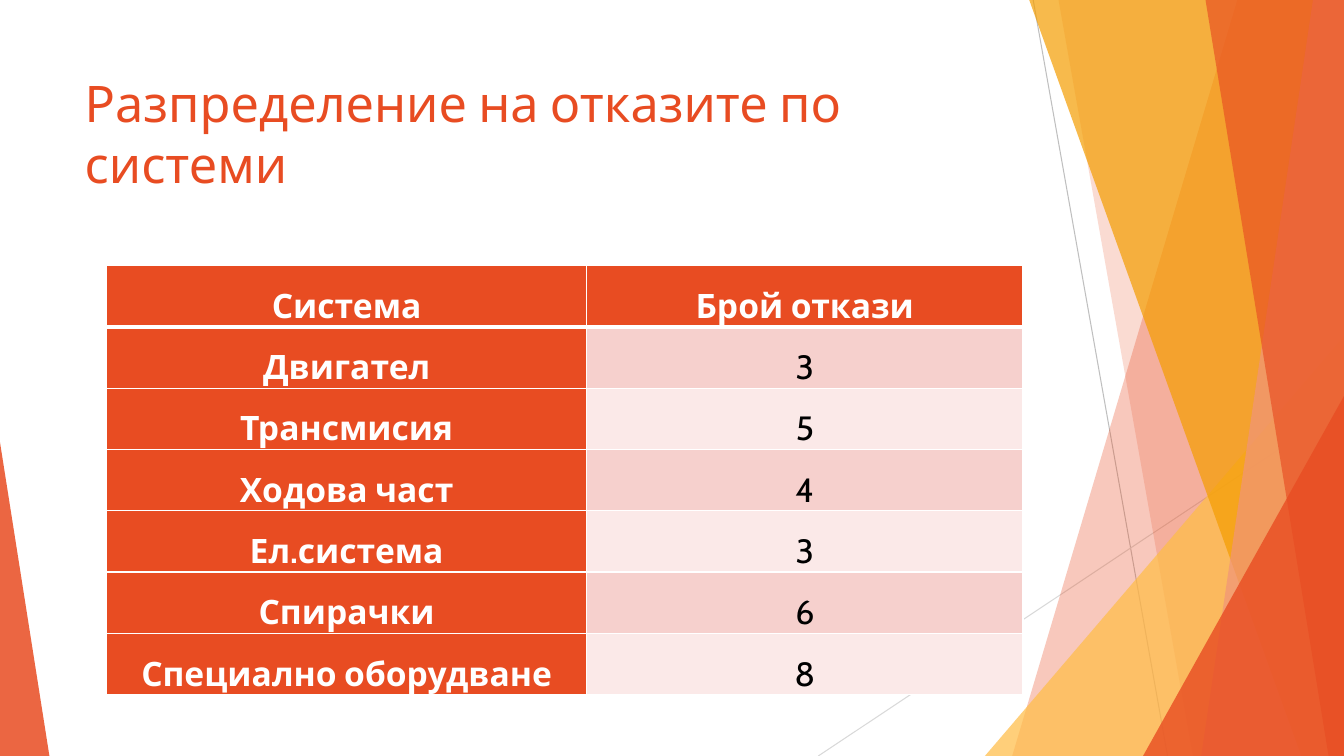
from dataclasses import dataclass

from lxml import etree
from pptx import Presentation
from pptx.dml.color import RGBColor
from pptx.enum.shapes import MSO_CONNECTOR, MSO_SHAPE
from pptx.enum.text import MSO_ANCHOR, PP_ALIGN
from pptx.oxml.ns import qn
from pptx.util import Pt

LEFT, CENTER = PP_ALIGN.LEFT, PP_ALIGN.CENTER
TOP = MSO_ANCHOR.TOP
TRIANGLE = MSO_SHAPE.ISOSCELES_TRIANGLE
STRAIGHT = MSO_CONNECTOR.STRAIGHT

WIDTH, HEIGHT = 960, 540
BLEED = -0.6  # top edge of the bands
FONT = "Cabin"
COLORS = {
    "orange": "E84C22", "amber": "F49D00", "yellow": "FFBD47",
    "salmon": "F1947A", "gray": "BFBFBF", "light_gray": "D9D9D9",
    "pink": "F6D0CD", "pale_pink": "FBE9E8", "white": "FFFFFF",
    "black": "000000",
}


@dataclass
class Line:
    x1: float
    y1: float
    x2: float
    y2: float
    color: str


@dataclass
class Band:
    """Band from the top to the bottom edge, ending at the right edge."""
    top_x: float
    bottom_x: float
    color: str
    alpha: int


@dataclass
class Triangle:
    """Right triangle standing on the bottom edge."""
    left: float
    top: float
    width: float
    apex: int
    color: str
    alpha: int


LINES = [
    Line(738, 0, 834, HEIGHT, "gray"),
    Line(WIDTH, 290, 584.5, HEIGHT, "light_gray"),
]
FACETS = [
    Band(884, 723, "orange", 30),
    Band(756, 852, "orange", 20),
    Triangle(703.5, 240, 256.5, 1, "yellow", 72),
    Band(735, 929.5, "amber", 70),
    Band(938, 858, "salmon", 70),
    Band(861, 949, "orange", 65),
    Triangle(816.5, 283, 143.5, 1, "orange", 80),
    Triangle(0, 316, 35.3, 0, "orange", 85),
]
HEADER = ("Система", "Брой откази")
FAILURES = [
    ("Двигател", "3"), ("Трансмисия", "5"), ("Ходова част", "4"),
    ("Ел.система", "3"), ("Спирачки", "6"), ("Специално оборудване", "8"),
]
COLUMN_WIDTHS = (342.7, 311.8)
ROW_HEIGHT = 42


def rgb(name: str) -> RGBColor:
    return RGBColor.from_string(COLORS[name])


def write(tf, text: str, *, size: float, color: str, bold: bool = False,
          align=LEFT, spacing: float = 1.0) -> None:
    p = tf.paragraphs[0]
    p.alignment = align
    p.line_spacing = spacing
    r = p.add_run()
    r.text = text
    r.font.name = FONT
    r.font.size = Pt(size)
    r.font.bold = bold
    r.font.color.rgb = rgb(color)


def draw_line(s, line: Line) -> None:
    sp = s.shapes.add_connector(
        STRAIGHT, Pt(line.x1), Pt(line.y1), Pt(line.x2), Pt(line.y2))
    sp.line.color.rgb = rgb(line.color)
    sp.line.width = Pt(0.75)
    etree.SubElement(sp.element.spPr, qn("a:effectLst"))


def draw_facet(s, facet: Band | Triangle) -> None:
    if isinstance(facet, Band):
        outline = s.shapes.build_freeform(Pt(facet.top_x), Pt(BLEED))
        outline.add_line_segments([
            (Pt(WIDTH), Pt(BLEED)), (Pt(WIDTH), Pt(HEIGHT)),
            (Pt(facet.bottom_x), Pt(HEIGHT))], close=True)
        sp = outline.convert_to_shape()
    else:
        sp = s.shapes.add_shape(
            TRIANGLE, Pt(facet.left), Pt(facet.top),
            Pt(facet.width), Pt(HEIGHT - facet.top))
        sp.adjustments[0] = facet.apex
    sp.shadow.inherit = False
    sp.line.fill.background()
    sp.fill.solid()
    sp.fill.fore_color.rgb = rgb(facet.color)
    color = sp.element.spPr.find(qn("a:solidFill"))[0]
    etree.SubElement(color, qn("a:alpha"), val=str(facet.alpha * 1000))


def set_borders(cell, widths: dict[str, float]) -> None:
    tc_pr = cell._tc.get_or_add_tcPr()
    for i, (side, width) in enumerate(widths.items()):
        ln = etree.Element(qn(f"a:ln{side}"), w=str(Pt(width)))
        fill = etree.SubElement(ln, qn("a:solidFill"))
        etree.SubElement(fill, qn("a:srgbClr"), val=COLORS["white"])
        tc_pr.insert(i, ln)


def draw_table(s, left: float, top: float) -> None:
    rows = [HEADER, *FAILURES]
    table = s.shapes.add_table(
        len(rows), len(HEADER), Pt(left), Pt(top),
        Pt(sum(COLUMN_WIDTHS)), Pt(ROW_HEIGHT * len(rows))).table
    table.first_col = True
    for column, width in zip(table.columns, COLUMN_WIDTHS):
        column.width = Pt(width)
    for i, row in enumerate(rows):
        table.rows[i].height = Pt(ROW_HEIGHT)
        for j, text in enumerate(row):
            cell = table.cell(i, j)
            heading = i == 0 or j == 0
            band = "pink" if i % 2 else "pale_pink"
            cell.margin_left = cell.margin_right = Pt(5)
            cell.margin_top = cell.margin_bottom = 0
            cell.fill.solid()
            cell.fill.fore_color.rgb = rgb("orange" if heading else band)
            set_borders(cell, {"L": 1, "R": 1, "T": 3 if i == 1 else 1,
                               "B": 3 if i == 0 else 1})
            write(cell.text_frame, text, size=24, bold=heading, align=CENTER,
                  color="white" if heading else "black", spacing=1.5)


def main() -> None:
    prs = Presentation()
    prs.slide_width, prs.slide_height = Pt(WIDTH), Pt(HEIGHT)
    s = prs.slides.add_slide(prs.slide_layouts[5])

    # Background decoration
    for line in LINES:
        draw_line(s, line)
    for facet in FACETS:
        draw_facet(s, facet)

    # Title, in front of the decoration
    title = s.shapes.title
    s.shapes.element.append(title.element)
    title.left, title.top = Pt(53.3), Pt(48)
    title.width, title.height = Pt(677), Pt(104)
    title.text_frame.word_wrap = True
    title.text_frame.vertical_anchor = TOP
    write(title.text_frame, "Разпределение на отказите по системи",
          size=36, color="orange")

    # Failures by system
    draw_table(s, 76.3, 189.7)
    prs.save("out.pptx")


if __name__ == "__main__":
    main()
